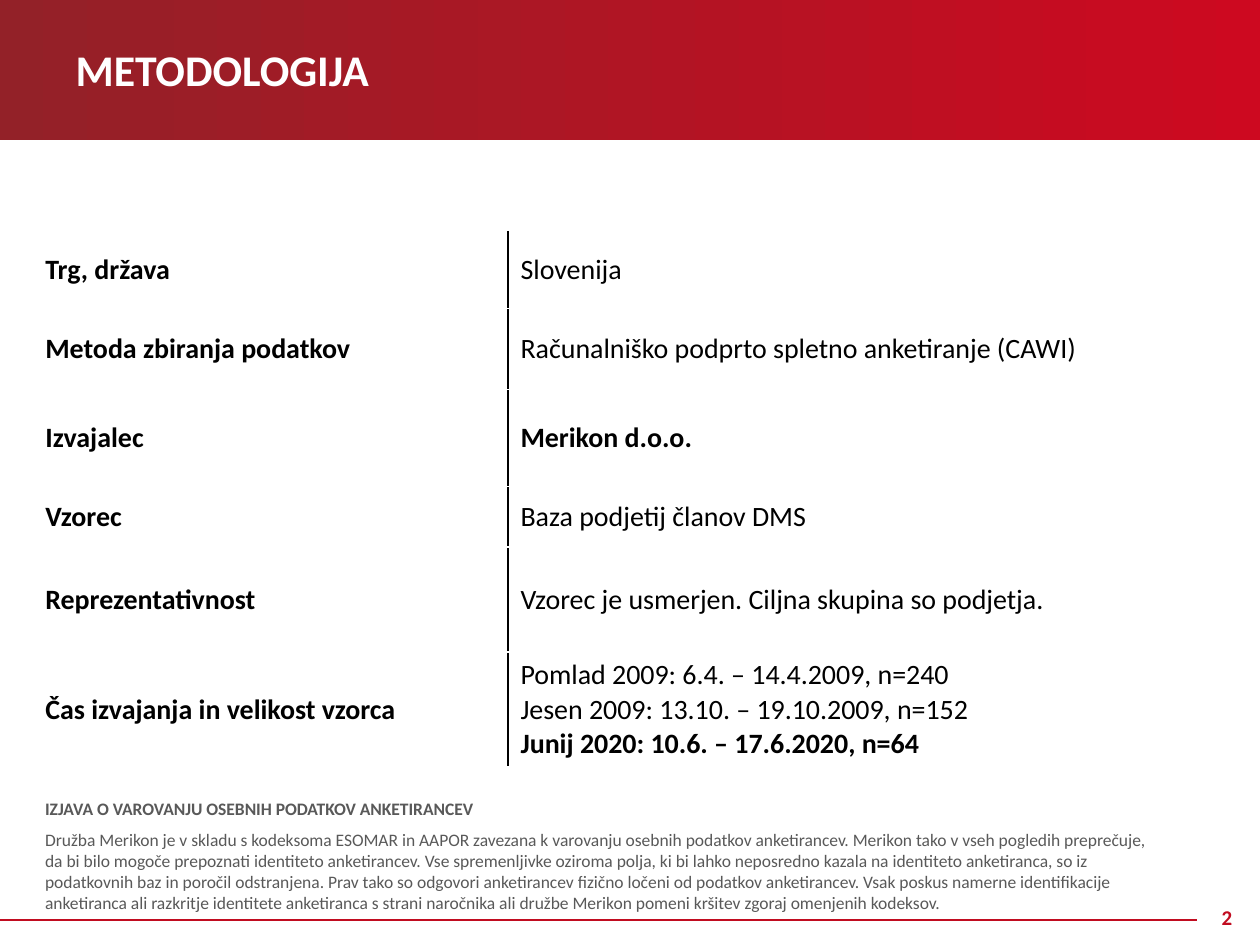
from lxml import etree
from pptx import Presentation
from pptx.dml.color import RGBColor
from pptx.enum.shapes import MSO_CONNECTOR, MSO_SHAPE
from pptx.enum.text import MSO_ANCHOR, PP_ALIGN
from pptx.oxml.ns import qn
from pptx.util import Cm, Pt

RECTANGLE = MSO_SHAPE.RECTANGLE
STRAIGHT = MSO_CONNECTOR.STRAIGHT
MIDDLE = MSO_ANCHOR.MIDDLE
LEFT, RIGHT = PP_ALIGN.LEFT, PP_ALIGN.RIGHT

COLORS = {
    "band_start": "932128",
    "band_end": "CD0920",
    "accent": "C10C20",
    "white": "FFFFFF",
    "black": "000000",
    "grey": "595959",
}

# Label, then the value lines as (text, bold), then the row height in cm
METHOD_ROWS = [
    ("Trg, država", [("Slovenija", False)], 1.55),
    ("Metoda zbiranja podatkov",
     [("Računalniško podprto spletno anketiranje (CAWI)", False)], 1.63),
    ("Izvajalec", [("Merikon d.o.o.", True)], 1.96),
    ("Vzorec", [("Baza podjetij članov DMS", False)], 1.22),
    ("Reprezentativnost",
     [("Vzorec je usmerjen. Ciljna skupina so podjetja.", False)], 2.11),
    ("Čas izvajanja in velikost vzorca",
     [("Pomlad 2009: 6.4. – 14.4.2009, n=240", False),
      ("Jesen 2009: 13.10. – 19.10.2009, n=152", False),
      ("Junij 2020: 10.6. – 17.6.2020, n=64", True)], 2.32),
]
PRIVACY_STATEMENT = [
    ("IZJAVA O VAROVANJU OSEBNIH PODATKOV ANKETIRANCEV", True),
    ("Družba Merikon je v skladu s kodeksoma ESOMAR in AAPOR zavezana k varovanju "
     "osebnih podatkov anketirancev. Merikon tako v vseh pogledih preprečuje, da bi "
     "bilo mogoče prepoznati identiteto anketirancev. Vse spremenljivke oziroma polja, "
     "ki bi lahko neposredno kazala na identiteto anketiranca, so iz podatkovnih baz in "
     "poročil odstranjena. Prav tako so odgovori anketirancev fizično ločeni od podatkov "
     "anketirancev. Vsak poskus namerne identifikacije anketiranca ali razkritje "
     "identitete anketiranca s strani naročnika ali družbe Merikon pomeni kršitev zgoraj "
     "omenjenih kodeksov.", False),
]


class SlideBuilder:
    """Holds the slide and its shared text style."""

    font_name = "Calibri"

    def __init__(self, slide):
        self.slide = slide

    def fill_text(self, frame, lines, size, color, align=LEFT, gap=0):
        """Fill a text frame with (text, bold) paragraphs, gap points apart."""
        frame.text = "\n".join(text for text, _ in lines)
        for index, (paragraph, (_, bold)) in enumerate(zip(frame.paragraphs, lines)):
            paragraph.alignment = align
            if index < len(lines) - 1:
                paragraph.space_after = Pt(gap)
            for run in paragraph.runs:
                run.font.name = self.font_name
                run.font.size = Pt(size)
                run.font.bold = bold
                run.font.color.rgb = RGBColor.from_string(COLORS[color])

    def header_band(self, width, height):
        band = self.slide.shapes.add_shape(RECTANGLE, 0, 0, width, height)
        band.shadow.inherit = False
        band.line.fill.background()
        band.fill.gradient()
        band.fill.gradient_angle = 0
        for stop, color in zip(band.fill.gradient_stops, ("band_start", "band_end")):
            stop.color.rgb = RGBColor.from_string(COLORS[color])
        return band

    def title(self, text, left, top, width, height, behind):
        title = self.slide.shapes.title
        title.left, title.top, title.width, title.height = left, top, width, height
        title.text_frame.vertical_anchor = MIDDLE
        self.fill_text(title.text_frame, [(text, True)], 25, "white")
        behind.element.addnext(title.element)

    def rule(self, y, width):
        rule = self.slide.shapes.add_connector(STRAIGHT, 0, y, width, y)
        rule.line.width = Pt(1)
        rule.line.color.rgb = RGBColor.from_string(COLORS["accent"])
        etree.SubElement(rule.element.spPr, qn("a:effectLst"))

    def text_box(self, lines, left, top, width, height, size, color,
                 align=LEFT, gap=0, inset=True):
        frame = self.slide.shapes.add_textbox(left, top, width, height).text_frame
        frame.word_wrap = True
        if inset:
            frame.vertical_anchor = MIDDLE
        else:
            frame.margin_left = frame.margin_top = frame.margin_bottom = 0
        self.fill_text(frame, lines, size, color, align, gap)

    def cell_border(self, cell, side):
        border = etree.Element(qn(f"a:{side}"), w=str(Pt(1)))
        fill = etree.SubElement(border, qn("a:solidFill"))
        etree.SubElement(fill, qn("a:srgbClr"), val=COLORS["black"])
        cell._tc.get_or_add_tcPr().insert(0, border)

    def method_table(self, rows, left, top, column_widths):
        height = Cm(sum(row_height for _, _, row_height in rows))
        table = self.slide.shapes.add_table(
            len(rows), 2, left, top, sum(column_widths), height).table
        table.first_row = table.horz_banding = False
        for column, width in zip(table.columns, column_widths):
            column.width = width
        for row, (label, values, row_height) in zip(table.rows, rows):
            row.height = Cm(row_height)
            contents = ([(label, True)], values)
            for cell, lines, side in zip(row.cells, contents, ("lnR", "lnL")):
                cell.fill.background()
                cell.vertical_anchor = MIDDLE
                self.fill_text(cell.text_frame, lines, 16, "black")
                self.cell_border(cell, side)


def main():
    presentation = Presentation()
    presentation.slide_width, presentation.slide_height = Cm(25.4), Cm(19.05)
    title_only = presentation.slide_layouts[5]
    builder = SlideBuilder(presentation.slides.add_slide(title_only))

    band = builder.header_band(presentation.slide_width, Cm(2.82))
    builder.title("METODOLOGIJA", Cm(1.27), Cm(0.36), Cm(17.58), Cm(2.06), behind=band)
    builder.rule(Cm(18.54), Cm(24.13))
    builder.method_table(METHOD_ROWS, Cm(0.66), Cm(4.67), (Cm(9.58), Cm(14.5)))
    builder.text_box([("2", True)], Cm(22.02), Cm(17.98), Cm(3.07), Cm(1.02),
                     12, "accent", align=RIGHT)
    builder.text_box(PRIVACY_STATEMENT, Cm(0.91), Cm(16.08), Cm(22.48), Cm(2.36),
                     10, "grey", gap=6, inset=False)

    presentation.save("out.pptx")


if __name__ == "__main__":
    main()
